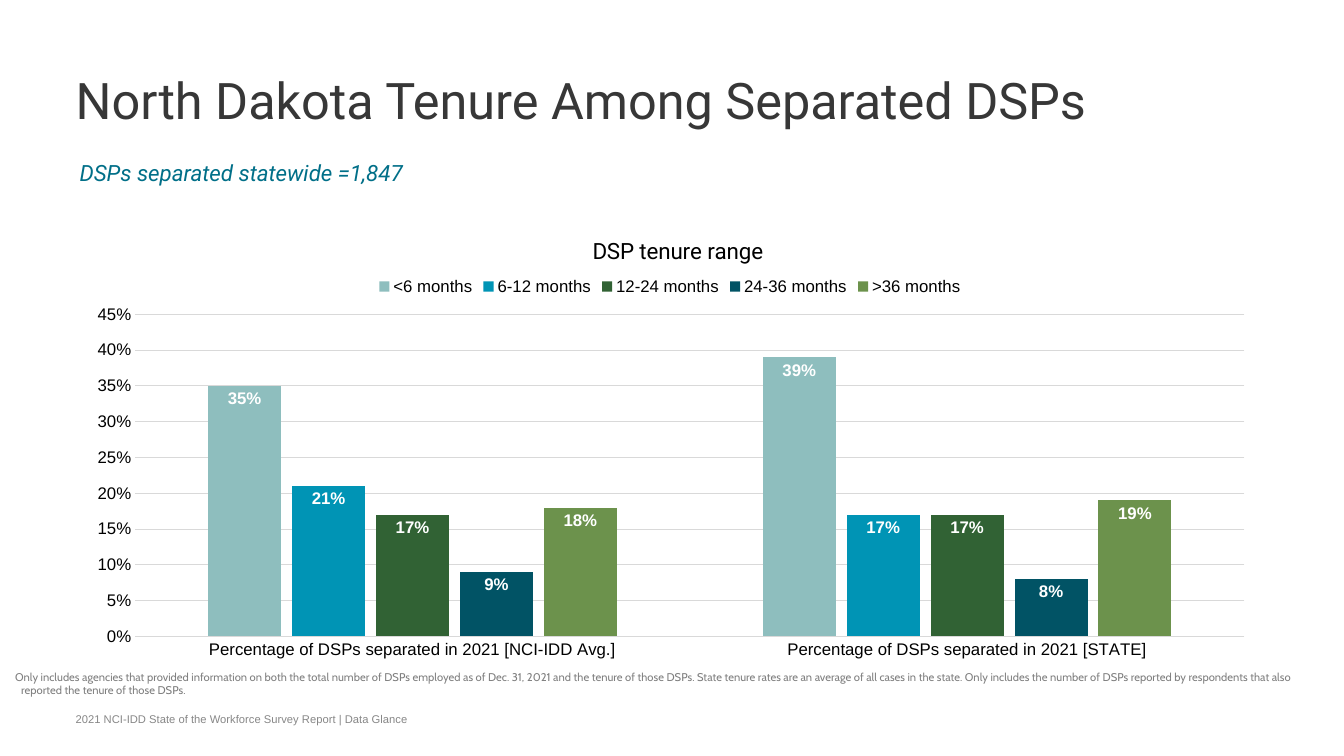
from lxml import etree
from pptx import Presentation
from pptx.chart.data import CategoryChartData
from pptx.dml.color import RGBColor
from pptx.enum.chart import XL_CHART_TYPE as ChartType
from pptx.enum.chart import XL_LABEL_POSITION as LabelPosition
from pptx.enum.chart import XL_LEGEND_POSITION as LegendPosition
from pptx.enum.chart import XL_TICK_MARK as TickMark
from pptx.enum.text import MSO_ANCHOR as Anchor
from pptx.oxml.ns import qn
from pptx.util import Inches, Pt

BLACK = RGBColor(0x00, 0x00, 0x00)
WHITE = RGBColor(0xFF, 0xFF, 0xFF)
CHARCOAL = RGBColor(0x37, 0x37, 0x37)
TEAL = RGBColor(0x00, 0x6F, 0x88)
NOTE_GREY = RGBColor(0x7F, 0x7F, 0x7F)
FOOTER_GREY = RGBColor(0x87, 0x87, 0x87)
GRID_GREY = RGBColor(0xD9, 0xD9, 0xD9)

CATEGORIES = [f"Percentage of DSPs separated in 2021 [{group}]"
              for group in ("NCI-IDD Avg.", "STATE")]
TENURES = [
    ("<6 months", (0.35, 0.39), RGBColor(0x8E, 0xBE, 0xBE)),
    ("6-12 months", (0.21, 0.17), RGBColor(0x00, 0x94, 0xB5)),
    ("12-24 months", (0.17, 0.17), RGBColor(0x31, 0x62, 0x34)),
    ("24-36 months", (0.09, 0.08), RGBColor(0x01, 0x53, 0x65)),
    (">36 months", (0.18, 0.19), RGBColor(0x6C, 0x92, 0x4C)),
]
NOTE = ("Only includes agencies that provided information on both the total number "
        "of DSPs employed as of Dec. 31, 2021 and the tenure of those DSPs. State "
        "tenure rates are an average of all cases in the state. Only includes the "
        "number of DSPs reported by respondents that also reported the tenure of "
        "those DSPs.")

# Regions: left, top, width, height in inches
MARGIN, CONTENT_WIDTH = 0.75, 11.83
TITLE_BOX = (MARGIN, 0.75, CONTENT_WIDTH, 1.2)
SUBTITLE_BOX = (0.79, 1.45, 11.75, 0.92)
CHART_BOX = (MARGIN, 2.13, CONTENT_WIDTH, 4.5)
NOTE_BOX = (0.15, 6.65, 12.95, 0.53)
FOOTER_BOX = (MARGIN, 7.05, 7.86, 0.15)


def style_font(font, size, color, name="Arial", bold=False, italic=False):
    font.size, font.name = Pt(size), name
    font.bold, font.italic = bold, italic
    font.color.rgb = color


def add_text(page, region, text, size, color, name, italic=False,
             spacing=1.0, anchor=Anchor.TOP):
    box = page.shapes.add_textbox(*map(Inches, region))
    frame = box.text_frame
    frame.word_wrap = True
    frame.vertical_anchor = anchor
    frame.margin_left = frame.margin_right = 0
    frame.margin_top = frame.margin_bottom = 0
    para = frame.paragraphs[0]
    para.text = text
    para.line_spacing = spacing
    style_font(para.runs[0].font, size, color, name, italic=italic)
    return para


def add_note(page, region):
    para = add_text(page, region, NOTE, 8, NOTE_GREY, "Cabin")
    para.space_after = Pt(6)
    properties = para._p.get_or_add_pPr()
    properties.set("marL", str(Inches(0.06)))
    properties.set("indent", str(Inches(-0.06)))


def place_part(part, inner=False, **shares):
    """Place a chart part at shares of the chart's size."""
    for old in part.findall(qn("c:layout")):
        part.remove(old)
    layout = etree.Element(qn("c:layout"))
    manual = etree.SubElement(layout, qn("c:manualLayout"))
    settings = {"layoutTarget": "inner"} if inner else {}
    settings.update(xMode="edge", yMode="edge", **shares)
    for tag, value in settings.items():
        etree.SubElement(manual, qn(f"c:{tag}")).set("val", str(value))
    overlay = part.find(qn("c:overlay"))
    if overlay is None:
        part.insert(0, layout)
    else:
        overlay.addprevious(layout)


def style_axes(chart):
    tenure_axis, share_axis = chart.category_axis, chart.value_axis
    for axis in (tenure_axis, share_axis):
        axis.major_tick_mark = axis.minor_tick_mark = TickMark.NONE
        style_font(axis.tick_labels.font, 12, BLACK)
    share_axis.minimum_scale, share_axis.maximum_scale = 0, 0.45
    share_axis.major_unit = 0.05
    share_axis.tick_labels.number_format = "0%"
    share_axis.tick_labels.number_format_is_linked = False
    share_axis.format.line.fill.background()
    for line in (tenure_axis.format.line, share_axis.major_gridlines.format.line):
        line.color.rgb = GRID_GREY
        line.width = Pt(0.75)


def add_tenure_chart(page, region):
    data = CategoryChartData(number_format="0%")
    data.categories = CATEGORIES
    for name, values, _ in TENURES:
        data.add_series(name, values)
    chart = page.shapes.add_chart(
        ChartType.COLUMN_CLUSTERED, *map(Inches, region), data).chart
    style_font(chart.font, 12, BLACK)

    # Title and legend
    chart.has_title = True
    heading = chart.chart_title.text_frame.paragraphs[0]
    heading.text = "DSP tenure range"
    style_font(heading.runs[0].font, 16, BLACK, "Roboto")
    chart.has_legend = True
    chart.legend.position = LegendPosition.TOP
    chart.legend.include_in_layout = False
    style_font(chart.legend.font, 12, BLACK)

    style_axes(chart)

    # Columns and their labels
    plot = chart.plots[0]
    plot.gap_width, plot.overlap = 200, -15
    plot.vary_by_categories = False
    for series, (_, _, color) in zip(plot.series, TENURES):
        series.format.fill.solid()
        series.format.fill.fore_color.rgb = color
        labels = series.data_labels
        labels.show_value = True
        labels.position = LabelPosition.INSIDE_END
        labels.number_format, labels.number_format_is_linked = "0%", False
        style_font(labels.font, 12, WHITE, bold=True)

    # Places inside the chart
    body = chart.element.find(qn("c:chart"))
    place_part(body.find(qn("c:title")), x=0.43, y=0.04)
    place_part(body.find(qn("c:legend")), x=0.25, y=0.13)
    place_part(body.find(qn("c:plotArea")), inner=True,
               x=0.05, y=0.22, w=0.93, h=0.71)


def build_tenure_slide(deck):
    page = deck.slides.add_slide(deck.slide_layouts[6])
    add_tenure_chart(page, CHART_BOX)
    add_text(page, TITLE_BOX, "North Dakota Tenure Among Separated DSPs",
             36, CHARCOAL, "Roboto", spacing=0.9)
    add_text(page, FOOTER_BOX,
             "2021 NCI-IDD State of the Workforce Survey Report | Data Glance",
             8, FOOTER_GREY, "Arial", anchor=Anchor.BOTTOM)
    add_text(page, SUBTITLE_BOX, "DSPs separated statewide =1,847",
             16, TEAL, "Roboto", italic=True, spacing=1.5)
    add_note(page, NOTE_BOX)


def main():
    deck = Presentation()
    deck.slide_width, deck.slide_height = Inches(13.33), Inches(7.5)
    build_tenure_slide(deck)
    deck.save("out.pptx")


if __name__ == "__main__":
    main()
